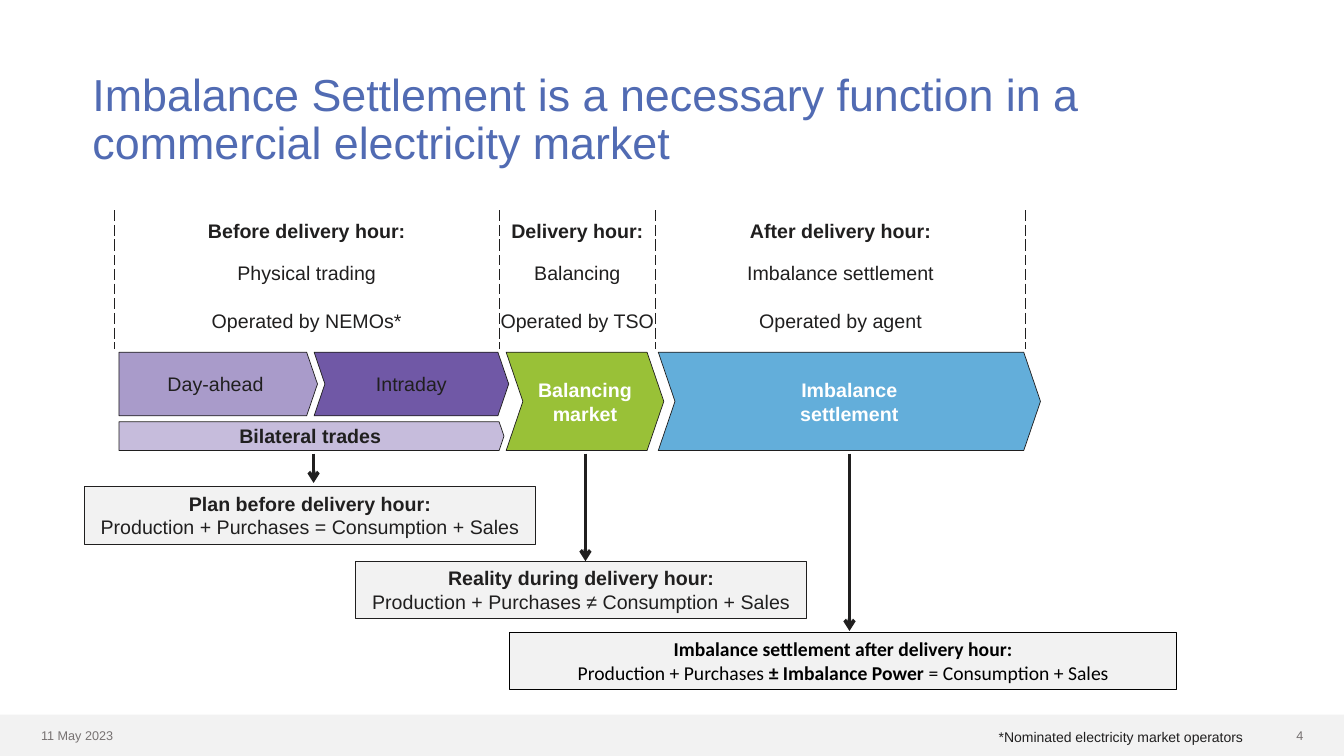
from lxml import etree
from pptx import Presentation
from pptx.dml.color import RGBColor
from pptx.enum.shapes import MSO_CONNECTOR as LINK, MSO_SHAPE as SHAPE
from pptx.enum.text import MSO_ANCHOR as ANCHOR, PP_ALIGN as ALIGN
from pptx.oxml import parse_xml
from pptx.oxml.ns import nsdecls, qn
from pptx.util import Pt

INK = RGBColor(0x20, 0x1F, 0x1F)
BLACK = RGBColor(0, 0, 0)
WHITE = RGBColor(0xFF, 0xFF, 0xFF)
PALE = RGBColor(0xF2, 0xF2, 0xF2)
GREY = RGBColor(0x76, 0x71, 0x71)
BLUE = RGBColor(0x51, 0x6B, 0xB3)
LILAC = RGBColor(0xA9, 0x9B, 0xCA)
PURPLE = RGBColor(0x70, 0x58, 0xA6)
MAUVE = RGBColor(0xC6, 0xBC, 0xDC)
GREEN = RGBColor(0x99, 0xC1, 0x37)
SKY = RGBColor(0x63, 0xAE, 0xDA)


def write(frame, lines, size=14, color=INK, font="Arial",
          align=ALIGN.CENTER, anchor=ANCHOR.MIDDLE, space=None):
    """Fill a text frame; each line is a list of (text, bold) runs."""
    frame.word_wrap = True
    frame.vertical_anchor = anchor
    for i, line in enumerate(lines):
        para = frame.add_paragraph() if i else frame.paragraphs[0]
        para.alignment = align
        para.line_spacing = space
        for text, bold in line:
            run = para.add_run()
            run.text = text
            run.font.name = font
            run.font.size = Pt(size)
            run.font.bold = bold
            run.font.color.rgb = color


def draw(kind, left, top, width, height, fill, edge=None, weight=0.5):
    shape = slide.shapes.add_shape(kind, Pt(left), Pt(top), Pt(width), Pt(height))
    shape.shadow.inherit = False
    shape.fill.solid()
    shape.fill.fore_color.rgb = fill
    if edge is None:
        shape.line.fill.background()
    else:
        shape.line.color.rgb = edge
        shape.line.width = Pt(weight)
    return shape


deck = Presentation()
deck.slide_width, deck.slide_height = Pt(960), Pt(540)
slide = deck.slides.add_slide(deck.slide_layouts[6])

# Footer band, title and small print
draw(SHAPE.RECTANGLE, 0, 510.5, 960, 29.5, PALE)
title = "Imbalance Settlement is a necessary function in a commercial electricity market"
labels = [
    (title, 59, 41, 844.6, 90.7, 32, BLUE, ALIGN.LEFT, ANCHOR.MIDDLE, 0.9),
    ("11 May 2023", 22.3, 516.2, 152.6, 18, 9, GREY, ALIGN.LEFT, ANCHOR.TOP, None),
    ("4", 879.1, 516.2, 59, 18, 9, GREY, ALIGN.RIGHT, ANCHOR.TOP, None),
    ("*Nominated electricity market operators", 706.3, 517, 198.7, 19.4, 10, INK,
     ALIGN.LEFT, ANCHOR.TOP, None),
]
for text, left, top, width, height, size, color, align, anchor, space in labels:
    box = slide.shapes.add_textbox(Pt(left), Pt(top), Pt(width), Pt(height))
    write(box.text_frame, [[(text, False)]], size, color,
          align=align, anchor=anchor, space=space)

# Market phases
phases = [
    ("Day-ahead", SHAPE.PENTAGON, 85, 251.6, 141.8, 45.4, LILAC, INK, False),
    ("Intraday", SHAPE.CHEVRON, 224.4, 251.6, 139, 45.4, PURPLE, INK, False),
    ("Balancing market", SHAPE.CHEVRON, 361.6, 251.6, 112.6, 70.2, GREEN, WHITE, True),
    ("Imbalance\vsettlement", SHAPE.CHEVRON, 470.2, 251.6, 273, 70.2, SKY, WHITE, True),
    ("Bilateral trades", SHAPE.PENTAGON, 85, 301.3, 275, 20.5, MAUVE, INK, True),
]
for text, kind, left, top, width, height, fill, color, bold in phases:
    phase = draw(kind, left, top, width, height, fill, INK)
    phase.adjustments[0] = 0.17
    first, *rest = text.split("\v")
    write(phase.text_frame, [[(part, bold)] for part in (first, *rest)], color=color)

# Balance boxes, each with an arrow from its phase
plan = [[("Plan before delivery hour:", True)],
        [("Production + Purchases = Consumption + Sales", False)]]
real = [[("Reality during delivery hour:", True)],
        [("Production + Purchases ≠ Consumption + Sales", False)]]
after = [[("Imbalance settlement after delivery hour:", True)],
         [("Production + Purchases ", False), ("± Imbalance Power ", True),
          ("= Consumption + Sales", False)]]
boxes = [
    (plan, 60.3, 347.7, 322.4, INK, "Arial", 224, 345),
    (real, 254, 400.9, 322.4, INK, "Arial", 418.2, 400.9),
    (after, 364, 451.6, 476.6, BLACK, "Calibri", 606.8, 450.7),
]
for lines, left, top, width, color, font, x, tip in boxes:
    box = draw(SHAPE.RECTANGLE, left, top, width, 41.2, PALE, color, 0.75)
    write(box.text_frame, lines, color=color, font=font, anchor=ANCHOR.TOP)
    arrow = slide.shapes.add_connector(LINK.STRAIGHT, Pt(x), Pt(324), Pt(x), Pt(tip))
    arrow.line.color.rgb = INK
    arrow.line.width = Pt(2.5)
    arrow.line._get_or_add_ln().append(
        parse_xml(f'<a:tailEnd {nsdecls("a")} type="arrow"/>'))
    etree.SubElement(arrow._element.spPr, qn("a:effectLst"))

# Timeline table with dashed upright rules
rows = [
    ("Before delivery hour:", "Delivery hour:", "After delivery hour:"),
    ("Physical trading", "Balancing", "Imbalance settlement"),
    ("Operated by NEMOs*", "Operated by TSO", "Operated by agent"),
]
table = slide.shapes.add_table(3, 3, Pt(81.6), Pt(150.5), Pt(651), Pt(99.4)).table
table.first_row = table.horz_banding = False
for col, width in zip(table.columns, (275, 111.6, 264.4)):
    col.width = Pt(width)
for row, height in zip(table.rows, (31, 28.8, 39.6)):
    row.height = Pt(height)
for r, texts in enumerate(rows):
    for c, text in enumerate(texts):
        cell = table.cell(r, c)
        cell.fill.background()
        cell.margin_left = cell.margin_right = 0
        cell.margin_top = cell.margin_bottom = 0
        write(cell.text_frame, [[(text, r == 0)]], space=0.9)
        cell.vertical_anchor = ANCHOR.MIDDLE
        for i, side in enumerate(("lnL", "lnR")):
            cell._tc.tcPr.insert(i, parse_xml(
                f'<a:{side} {nsdecls("a")} w="{Pt(0.5)}"><a:solidFill>'
                f'<a:srgbClr val="{INK}"/></a:solidFill>'
                f'<a:prstDash val="dash"/></a:{side}>'))

deck.save("out.pptx")
